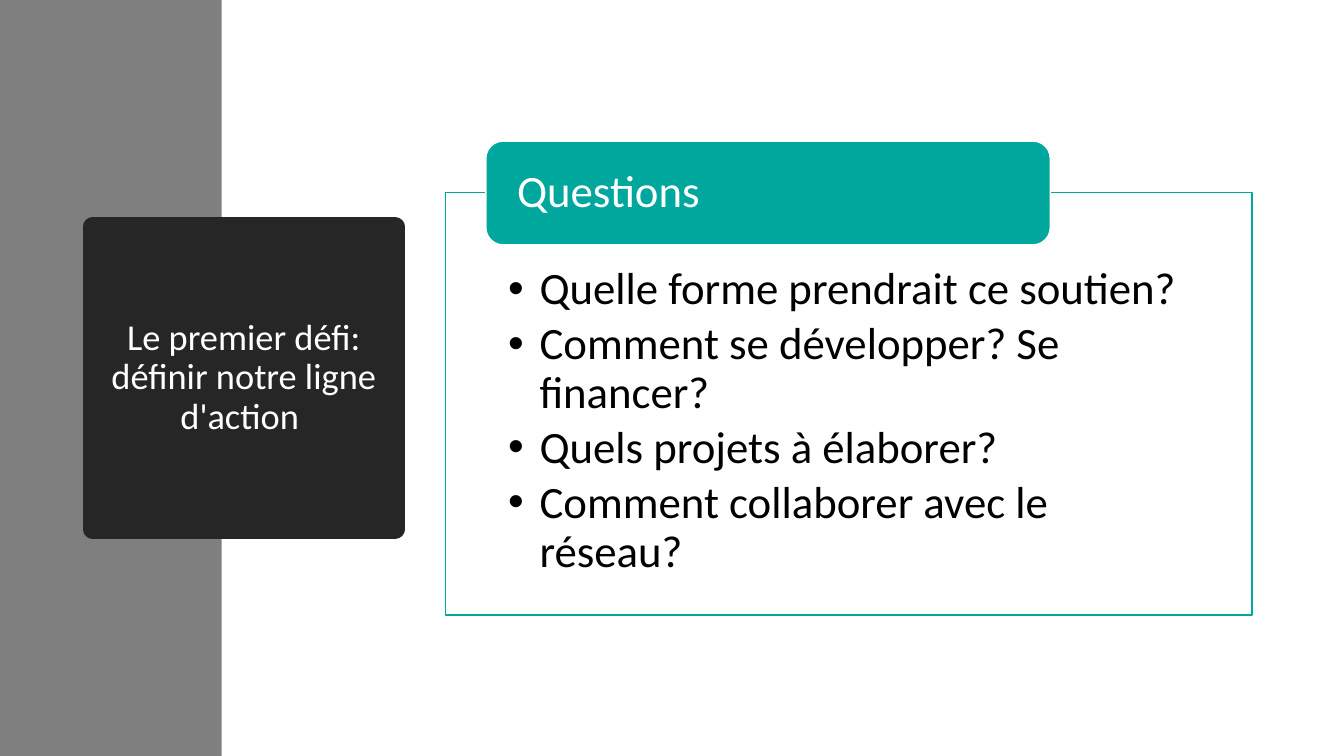
from dataclasses import dataclass

from lxml.etree import SubElement
from pptx import Presentation
from pptx.dml.color import RGBColor
from pptx.enum.shapes import MSO_SHAPE as Preset
from pptx.enum.text import MSO_ANCHOR as Anchor, MSO_AUTO_SIZE as AutoSize, PP_ALIGN as Align
from pptx.oxml.ns import qn
from pptx.util import Pt


@dataclass(frozen=True)
class Theme:
    font: str = "Calibri"
    title_size: float = 26
    body_size: float = 32
    gray: str = "7F7F7F"
    dark: str = "262626"
    teal: str = "00A79D"
    white: str = "FFFFFF"
    black: str = "000000"


THEME = Theme()
TITLE = "Le premier défi: définir notre ligne d'action "
HEADING = "Questions"
QUESTIONS = [
    "Quelle forme prendrait ce soutien?",
    "Comment se développer? Se financer?",
    "Quels projets à élaborer?",
    "Comment collaborer avec le réseau?",
]


def paint(shape, fill, line=None, width=1):
    shape.fill.solid()
    shape.fill.fore_color.rgb = RGBColor.from_string(fill)
    if line:
        shape.line.color.rgb = RGBColor.from_string(line)
        shape.line.width = Pt(width)
    else:
        shape.line.fill.background()


def add_box(slide, preset, bounds, fill, line=None):
    shape = slide.shapes.add_shape(preset, *map(Pt, bounds))
    shape.shadow.inherit = False
    paint(shape, fill, line)
    return shape


def write(shape, text, size, color, align, anchor, insets):
    frame = shape.text_frame
    frame.text = text
    frame.word_wrap = True
    frame.auto_size = AutoSize.NONE
    frame.vertical_anchor = anchor
    frame.margin_left, frame.margin_top, frame.margin_right, frame.margin_bottom = map(Pt, insets)
    for paragraph in frame.paragraphs:
        paragraph.alignment = align
        paragraph.line_spacing = 0.9
        for run in paragraph.runs:
            run.font.name = THEME.font
            run.font.size = Pt(size)
            run.font.color.rgb = RGBColor.from_string(color)


def add_bullets(shape, indent, space_after):
    for paragraph in shape.text_frame.paragraphs:
        paragraph.level = 1
        paragraph.space_after = Pt(space_after)
        properties = paragraph._p.get_or_add_pPr()
        properties.set("marL", str(Pt(indent)))
        properties.set("indent", str(Pt(-indent)))
        SubElement(properties, qn("a:buFont")).set("typeface", "Arial")
        SubElement(properties, qn("a:buChar")).set("char", "•")


def format_title(title):
    title.left, title.top, title.width, title.height = map(Pt, (66.24, 162, 216, 216))
    paint(title, THEME.dark, THEME.dark, 13.75)
    SubElement(title.line._get_or_add_ln(), qn("a:round"))
    write(title, TITLE, THEME.title_size, THEME.white, Align.CENTER, Anchor.MIDDLE, (7.2, 3.6, 7.2, 3.6))


def main():
    presentation = Presentation()
    presentation.slide_width, presentation.slide_height = Pt(960), Pt(540)
    slide = presentation.slides.add_slide(presentation.slide_layouts[5])

    title = slide.shapes.title
    format_title(title)
    sidebar = add_box(slide, Preset.RECTANGLE, (0, 0, 158.4, 540), THEME.gray)
    title.element.addprevious(sidebar.element)

    panel = add_box(slide, Preset.RECTANGLE, (318.24, 137.52, 576, 301.68), THEME.white, THEME.teal)
    write(panel, "\n".join(QUESTIONS), THEME.body_size, THEME.black, Align.LEFT, Anchor.TOP,
          (44.64, 52.56, 44.64, 18))
    add_bullets(panel, 22.5, 4.8)

    heading = add_box(slide, Preset.ROUNDED_RECTANGLE, (347.04, 100.8, 403.2, 74.16), THEME.teal, THEME.white)
    write(heading, HEADING, THEME.body_size, THEME.white, Align.LEFT, Anchor.MIDDLE, (18.72, 0, 18.72, 0))

    presentation.save("out.pptx")


if __name__ == "__main__":
    main()
